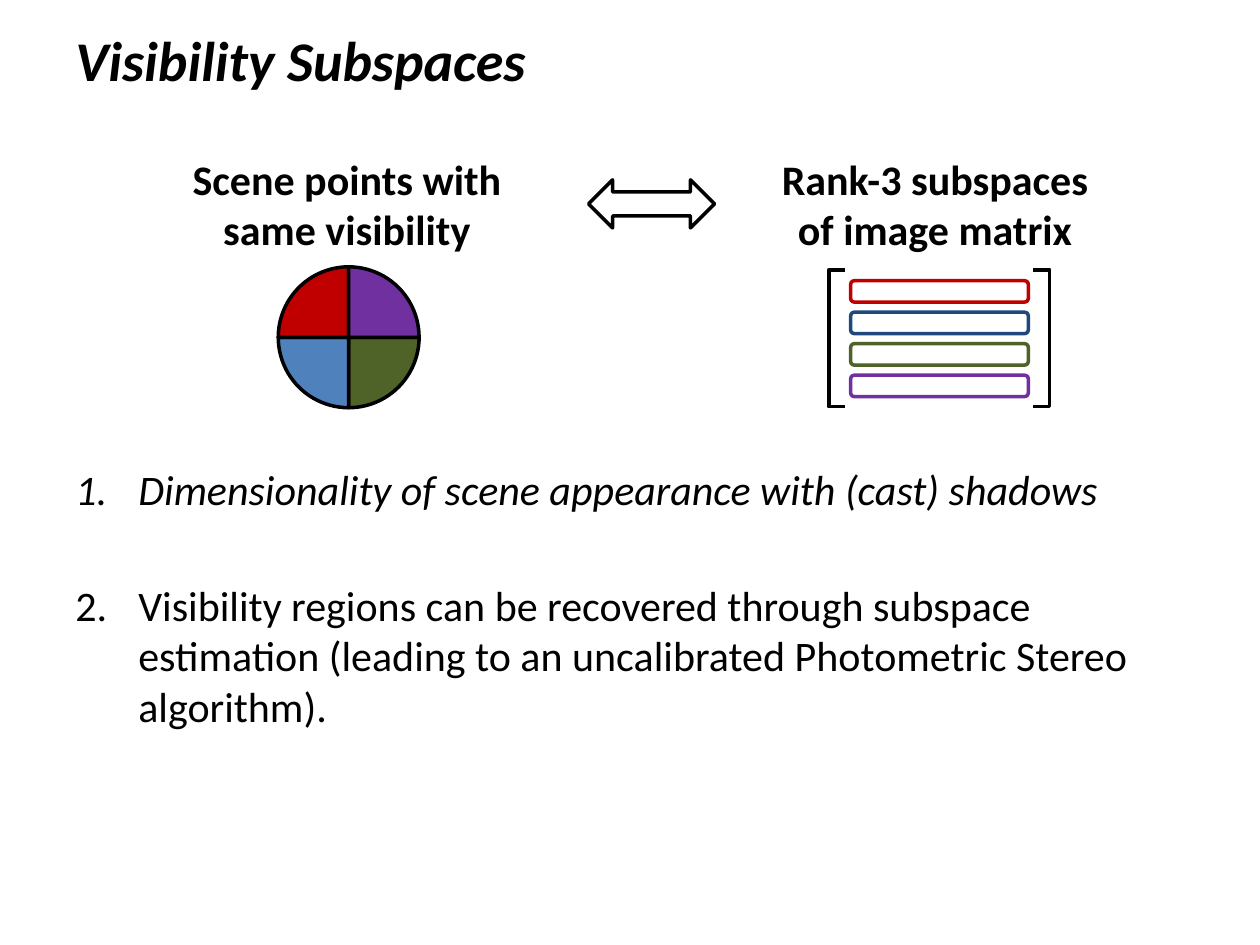
from lxml import etree
from pptx import Presentation
from pptx.dml.color import RGBColor
from pptx.enum.shapes import MSO_SHAPE
from pptx.enum.text import MSO_ANCHOR, PP_ALIGN
from pptx.oxml.ns import qn
from pptx.util import Cm, Pt

LEFT, CENTER = PP_ALIGN.LEFT, PP_ALIGN.CENTER
TOP, MIDDLE = MSO_ANCHOR.TOP, MSO_ANCHOR.MIDDLE
PIE, ROW, ARROW = MSO_SHAPE.PIE, MSO_SHAPE.ROUNDED_RECTANGLE, MSO_SHAPE.UP_DOWN_ARROW
COLORS = {
    "black": "000000",
    "red": "C00000",
    "light blue": "4F81BD",
    "dark blue": "1F497D",
    "green": "4F6228",
    "purple": "7030A0",
}


def add_text(left, top, width, height, lines, size, align=LEFT, anchor=TOP, bold=False):
    frame = slide.shapes.add_textbox(Cm(left), Cm(top), Cm(width), Cm(height)).text_frame
    frame.word_wrap = True
    frame.vertical_anchor = anchor
    frame.text = "\n".join(lines)
    for paragraph in frame.paragraphs:
        paragraph.alignment = align
        for run in paragraph.runs:
            run.font.name = "Calibri"
            run.font.size = Pt(size)
            run.font.bold = bold
            run.font.color.rgb = RGBColor.from_string(COLORS["black"])
    return frame


def style(shape, line, fill=None):
    shape.shadow.inherit = False
    shape.line.color.rgb = RGBColor.from_string(COLORS[line])
    shape.line.width = Pt(2)
    if fill:
        shape.fill.solid()
        shape.fill.fore_color.rgb = RGBColor.from_string(COLORS[fill])
    else:
        shape.fill.background()


prs = Presentation()
prs.slide_width, prs.slide_height = Cm(25.4), Cm(19.05)
slide = prs.slides.add_slide(prs.slide_layouts[6])

title = add_text(1.27, 0.2, 22.86, 1.98, ["Visibility Subspaces"], 32, anchor=MIDDLE, bold=True)
title.paragraphs[0].runs[0].font.italic = True

findings = add_text(1.27, 9.22, 22.86, 8.56, [
    "Dimensionality of scene appearance with (cast) shadows",
    "Visibility regions can be recovered through subspace estimation "
    "(leading to an uncalibrated Photometric Stereo algorithm).",
], 24)
for finding in findings.paragraphs:
    properties = finding._p.get_or_add_pPr()
    properties.set("marL", str(Cm(1.27)))
    properties.set("indent", str(-Cm(1.27)))
    etree.SubElement(properties, qn("a:buFont"), typeface="+mj-lt")
    etree.SubElement(properties, qn("a:buAutoNum"), type="arabicPeriod")
findings.paragraphs[0].runs[0].font.italic = True
findings.paragraphs[1].space_before = Pt(37.5)

add_text(2.97, 2.97, 8.05, 2.31, ["Scene points with same visibility"], 24, CENTER, bold=True)
add_text(15.27, 2.97, 7.16, 2.31, ["Rank-3 subspaces", "of image matrix"], 24, CENTER, bold=True)

equivalence = slide.shapes.add_shape(ARROW, Cm(12.65), Cm(2.84), Cm(0.97), Cm(2.54))
equivalence.rotation = 270
style(equivalence, "black")

QUARTER = 54
for index, region in enumerate(["green", "light blue", "red", "purple"]):
    sector = slide.shapes.add_shape(PIE, Cm(5.61), Cm(5.38), Cm(2.84), Cm(2.84))
    sector.adjustments[0] = index * QUARTER
    sector.adjustments[1] = (index + 1) % 4 * QUARTER
    style(sector, "black", region)

BRACKET_TOP, BRACKET_BOTTOM = Cm(5.44), Cm(8.2)
for tip, spine in [(17.04, 16.71), (20.83, 21.16)]:
    outline = slide.shapes.build_freeform(Cm(tip), BRACKET_TOP)
    outline.add_line_segments([
        (Cm(spine), BRACKET_TOP),
        (Cm(spine), BRACKET_BOTTOM),
        (Cm(tip), BRACKET_BOTTOM),
    ], close=False)
    style(outline.convert_to_shape(), "black")

for index, subspace in enumerate(["red", "dark blue", "green", "purple"]):
    row = slide.shapes.add_shape(ROW, Cm(17.15), Cm(5.66 + index * 0.635), Cm(3.58), Cm(0.43))
    style(row, subspace)

prs.save("out.pptx")
